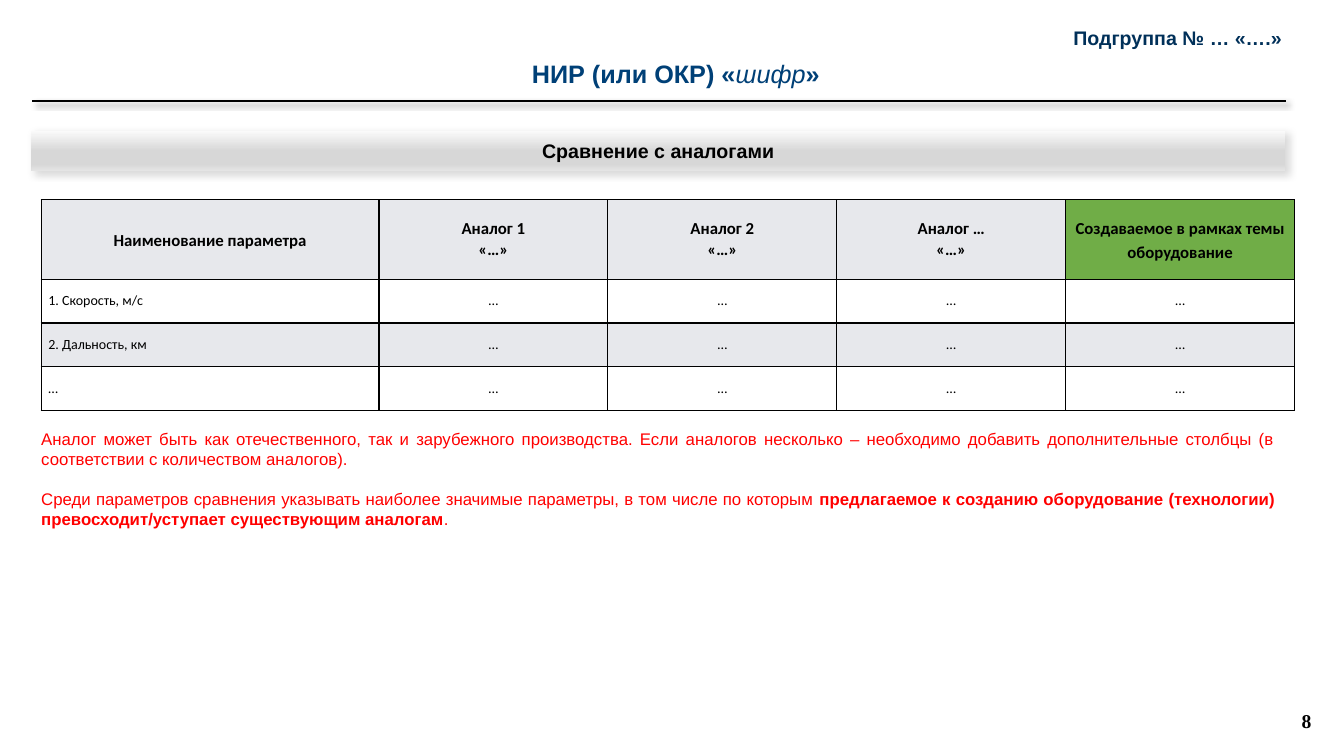
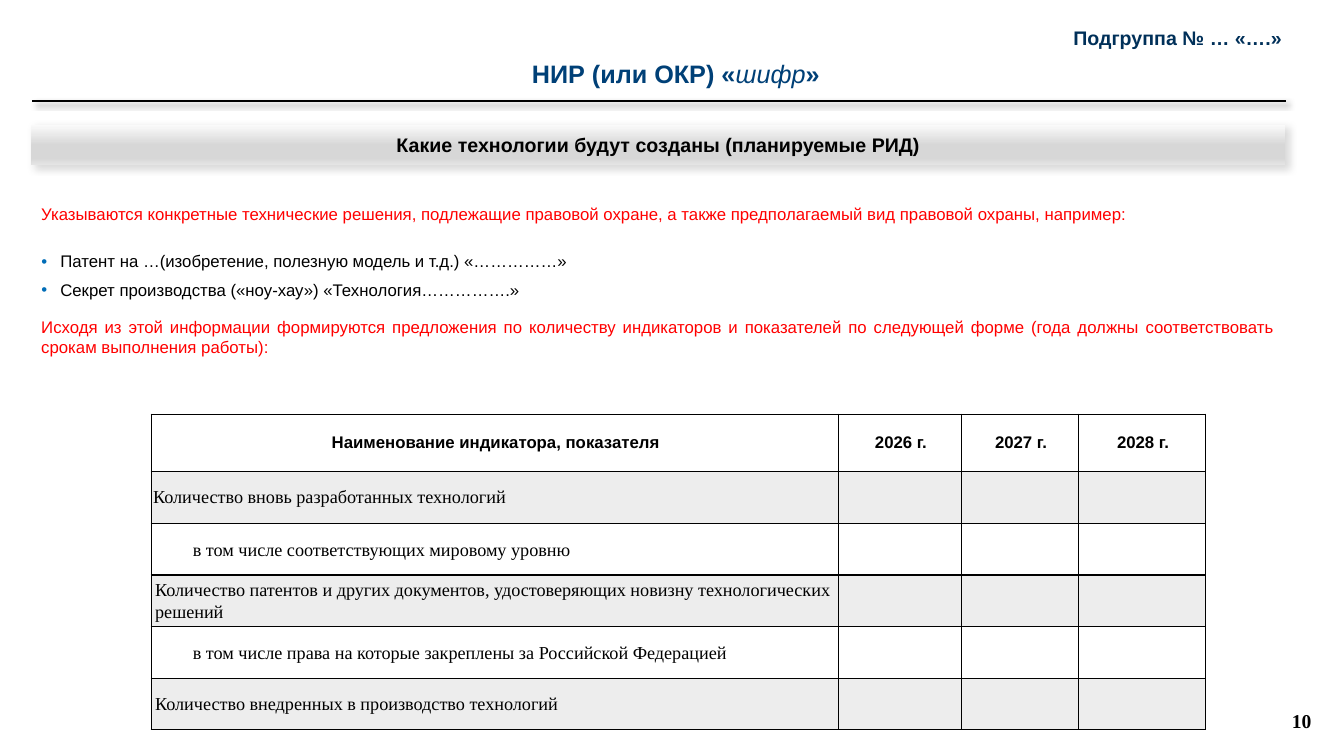
"""Builds two project report slides: analogue comparison and planned results."""
from lxml import etree
from pptx import Presentation
from pptx import util as u
from pptx.dml import color
from pptx.enum import shapes, text
from pptx.oxml import ns

BLACK, RED, NAVY, BLUE = "000000", "FF0000", "003059", "004077"
BULLET, GREEN, COOL_GREY, WARM_GREY = "016DB7", "70AD47", "E7E8EC", "EDEDED"
BANNER_STOPS = ((0, "FAFAFA"), (51, "D7D7D7"), (83, "D7D7D7"), (100, "E4E4E4"))
LEFT, WIDTH = 0.79, 31.6
CENTER, RIGHT = text.PP_ALIGN.CENTER, text.PP_ALIGN.RIGHT
JUSTIFY, START = text.PP_ALIGN.JUSTIFY, text.PP_ALIGN.LEFT
TOP, MIDDLE = text.MSO_ANCHOR.TOP, text.MSO_ANCHOR.MIDDLE
BOTTOM = text.MSO_ANCHOR.BOTTOM


def paint(value):
    """Turns a hex string into a colour."""
    return color.RGBColor.from_string(value)


def apply(target, values):
    """Sets every attribute named in a dict of format values."""
    for name, value in values.items():
        setattr(target, name, value)


def add_node(parent, tag, **attributes):
    """Appends an XML element with the given attributes."""
    values = {name: str(value) for name, value in attributes.items()}
    return etree.SubElement(parent, ns.qn(tag), values)


def style(size, hex_color=BLACK, name="Arial", bold=False):
    """Collects the font values of one text style."""
    return {"size": u.Pt(size), "name": name, "bold": bold, "hex": hex_color}


def place(shape, box):
    """Moves a shape to a box given in centimetres."""
    apply(shape, dict(zip(("left", "top", "width", "height"), map(u.Cm, box))))


def set_margins(target, horizontal, vertical):
    """Sets the inner margins of a frame or cell in centimetres."""
    apply(target, {f"margin_{side}": u.Cm(horizontal) for side in ("left", "right")})
    apply(target, {f"margin_{side}": u.Cm(vertical) for side in ("top", "bottom")})


def add_bullet(para):
    """Gives a paragraph a coloured hanging bullet."""
    props = para._p.get_or_add_pPr()
    apply_indent(para, 0.48, -0.48)
    add_node(add_node(props, "a:buClr"), "a:srgbClr", val=BULLET)
    add_node(props, "a:buFont", typeface="Arial")
    add_node(props, "a:buChar", char="•")


def apply_indent(para, margin, first=0):
    """Sets the left margin and first-line indent in centimetres."""
    props = para._p.get_or_add_pPr()
    props.set("marL", str(u.Cm(margin)))
    props.set("indent", str(u.Cm(first)))


def write(frame, paragraphs, font, layout, gap=0, bullets=False, indent=None):
    """Writes paragraphs, each a string or a list of spans with font changes."""
    for index, content in enumerate(paragraphs):
        para = frame.add_paragraph() if index else frame.paragraphs[0]
        if bullets:
            add_bullet(para)
        elif indent is not None:
            apply_indent(para, indent)
        apply(para, {"space_before": u.Pt(gap if index else 0), **layout})
        spans = [(content, {})] if isinstance(content, str) else content
        for wording, changes in spans:
            span = para.add_run()
            span.text = wording
            values = {**font, **changes}
            span.font.color.rgb = paint(values.pop("hex"))
            apply(span.font, values)


def prepare(shape, box, anchor=TOP, margins=(0.25, 0.13)):
    """Places a text shape and returns its wrapped frame."""
    place(shape, box)
    frame = shape.text_frame
    apply(frame, {"word_wrap": True, "auto_size": text.MSO_AUTO_SIZE.NONE,
                  "vertical_anchor": anchor})
    set_margins(frame, *margins)
    return frame


def add_text(page, box, paragraphs, font, align, gap=0, **frame_values):
    """Adds a text box."""
    shape = page.shapes.add_textbox(*map(u.Cm, box))
    write(prepare(shape, box, **frame_values), paragraphs, font,
          {"alignment": align}, gap)


def cast_shadow(shape, opacity, blur):
    """Adds a soft shadow towards the lower right."""
    effects = add_node(shape._element.spPr, "a:effectLst")
    shadow = add_node(effects, "a:outerShdw", blurRad=u.Pt(blur), dist=u.Pt(3),
                      dir=45 * 60000, algn="tl", rotWithShape=0)
    tint = add_node(shadow, "a:srgbClr", val=BLACK)
    add_node(tint, "a:alpha", val=opacity * 1000)


def add_banner(page, box, caption):
    """Adds the shaded section heading."""
    banner = page.shapes.add_shape(shapes.MSO_SHAPE.RECTANGLE, *map(u.Cm, box))
    banner.line.fill.background()
    banner.fill.gradient()
    banner.fill.gradient_angle = 270
    stops = banner._element.spPr.find(".//" + ns.qn("a:gsLst"))
    for stop in list(stops):
        stops.remove(stop)
    for position, shade in BANNER_STOPS:
        add_node(add_node(stops, "a:gs", pos=position * 1000), "a:srgbClr", val=shade)
    cast_shadow(banner, 14, 6)
    frame = prepare(banner, box, MIDDLE, (0.2, 0.1))
    write(frame, [caption], style(14, bold=True), {"alignment": CENTER})


def add_page(deck, layout, number, banner_top, caption):
    """Adds a slide with the shared header, rule, banner and number."""
    page = deck.slides.add_slide(deck.slide_layouts[layout])
    title = prepare(page.shapes.title, (0.76, 1.35, 32.54, 1.02))
    code = [("НИР (или ОКР) «", {}), ("шифр", {"bold": False, "italic": True}), ("»", {})]
    write(title, [code], style(18, BLUE, bold=True), {"alignment": CENTER})
    add_text(page, (LEFT, 0.51, 31.52, 0.74), ["Подгруппа № … «….»"],
             style(14, NAVY, bold=True), RIGHT, anchor=BOTTOM, margins=(0, 0))
    rule = page.shapes.add_connector(
        shapes.MSO_CONNECTOR.STRAIGHT, *map(u.Cm, (0.81, 2.54, 32.41, 2.54)))
    rule.line.width = u.Pt(1.5)
    rule.line.color.rgb = paint(BLACK)
    cast_shadow(rule, 40, 4)
    add_banner(page, (LEFT, banner_top, WIDTH, 1), caption)
    add_text(page, (25.68, 17.65, 7.62, 1.02), [str(number)],
             style(14, name="Times New Roman", bold=True), RIGHT, anchor=MIDDLE)
    return page


def add_grid(page, corner, widths, heights):
    """Adds a plain table with the given column widths and row heights."""
    box = (*corner, sum(widths), sum(heights))
    table = page.shapes.add_table(len(heights), len(widths), *map(u.Cm, box)).table
    apply(table, {"first_row": False, "horz_banding": False})
    for column, width in zip(table.columns, widths):
        column.width = u.Cm(width)
    for row, height in zip(table.rows, heights):
        row.height = u.Cm(height)
    return table


def format_cell(cell, fill, margin):
    """Draws the borders of a cell and sets its fill and margins."""
    props = cell._tc.get_or_add_tcPr()
    for tag in ("a:lnL", "a:lnR", "a:lnT", "a:lnB"):
        edge = add_node(props, tag, w=u.Pt(1))
        add_node(add_node(edge, "a:solidFill"), "a:srgbClr", val=BLACK)
    if fill:
        cell.fill.solid()
        cell.fill.fore_color.rgb = paint(fill)
    else:
        cell.fill.background()
    cell.vertical_anchor = MIDDLE
    set_margins(cell, margin, 0)


def add_comparison(page, corner):
    """Adds the table that compares analogues by parameter."""
    table = add_grid(page, corner, [8.51] + [5.77] * 4, [2.01] + [1.1] * 3)
    rows = [["Наименование параметра", "Аналог 1\n«…»", "Аналог 2\n«…»",
             "Аналог …\n«…»", "Создаваемое в рамках темы оборудование"]]
    rows += [[name] + ["…"] * 4 for name in ("1. Скорость, м/с", "2. Дальность, км", "…")]
    for r, row in enumerate(rows):
        for c, wording in enumerate(row):
            fill = None if r % 2 else COOL_GREY
            layout = {"alignment": JUSTIFY if r and not c else CENTER}
            if r == 0 and c in (0, 4):
                layout |= {"line_spacing": 1.15, "space_after": u.Pt(10)}
            cell = table.cell(r, c)
            format_cell(cell, GREEN if (r, c) == (0, 4) else fill, 0.18)
            font = style(10 if r else 12, name="Calibri", bold=not r)
            write(cell.text_frame, wording.split("\n"), font, layout)


def add_indicators(page, corner):
    """Adds the table of yearly indicators."""
    table = add_grid(page, corner, [17.32, 3.1, 2.95, 3.2], [1.45] + [1.3] * 5)
    headings = ["Наименование индикатора, показателя", "2026 г.", "2027 г.", "2028 г."]
    indicators = [
        ("Количество вновь разработанных технологий", 0),
        ("в том числе соответствующих мировому уровню", 1),
        ("Количество патентов и других документов, удостоверяющих новизну "
         "технологических решений", 0.05),
        ("в том числе права на которые закреплены за Российской Федерацией", 1),
        ("Количество внедренных в производство технологий", 0.05),
    ]
    for r, row in enumerate(table.rows):
        for cell in row.cells:
            format_cell(cell, WARM_GREY if r % 2 else None, 0.05)
    for c, heading in enumerate(headings):
        write(table.cell(0, c).text_frame, [heading], style(12, bold=True),
              {"alignment": CENTER}, indent=0.05)
    for r, (wording, indent) in enumerate(indicators, 1):
        write(table.cell(r, 0).text_frame, [wording], style(13, name="Times New Roman"),
              {"alignment": START, "line_spacing": 1.07 if indent else 1.0},
              indent=indent)


def build_comparison(deck):
    """Builds the slide on analogues."""
    page = add_page(deck, 5, 8, 3.3, "Сравнение с аналогами")
    add_comparison(page, (1.04, 5.03))
    notes = [
        "Аналог может быть как отечественного, так и зарубежного производства. "
        "Если аналогов несколько – необходимо добавить дополнительные столбцы "
        "(в соответствии с количеством аналогов).",
        [("Среди параметров сравнения указывать наиболее значимые параметры, "
          "в том числе по которым ", {}),
         ("предлагаемое к созданию оборудование (технологии) превосходит/уступает "
          "существующим аналогам", {"bold": True}),
         (".", {})],
    ]
    add_text(page, (LEFT, 10.67, WIDTH, 2.82), notes, style(12, RED), JUSTIFY, gap=14)


def build_technologies(deck):
    """Builds the slide on planned technologies."""
    page = add_page(deck, 1, 10, 3.15, "Какие технологии будут созданы (планируемые РИД)")
    notes = {
        5: "Указываются конкретные технические решения, подлежащие правовой охране, "
           "а также предполагаемый вид правовой охраны, например:",
        7.85: "Исходя из этой информации формируются предложения по количеству "
              "индикаторов и показателей по следующей форме (года должны "
              "соответствовать срокам выполнения работы):",
    }
    for top, note in notes.items():
        add_text(page, (LEFT, top, WIDTH, 1.27), [note], style(12, RED), JUSTIFY)
    body = prepare(page.placeholders[1], (LEFT, 6.2, WIDTH, 1.5))
    examples = ["Патент на …(изобретение, полезную модель и т.д.) «……………»",
                "Секрет производства («ноу-хау») «Технология…………….»"]
    write(body, examples, style(12), {"alignment": JUSTIFY, "space_after": u.Pt(3)},
          gap=3, bullets=True)
    add_indicators(page, (3.81, 10.44))


def main():
    """Builds and saves the deck."""
    deck = Presentation()
    apply(deck, {"slide_width": u.Cm(33.87), "slide_height": u.Cm(19.05)})
    build_comparison(deck)
    build_technologies(deck)
    deck.save("out.pptx")


if __name__ == "__main__":
    main()
